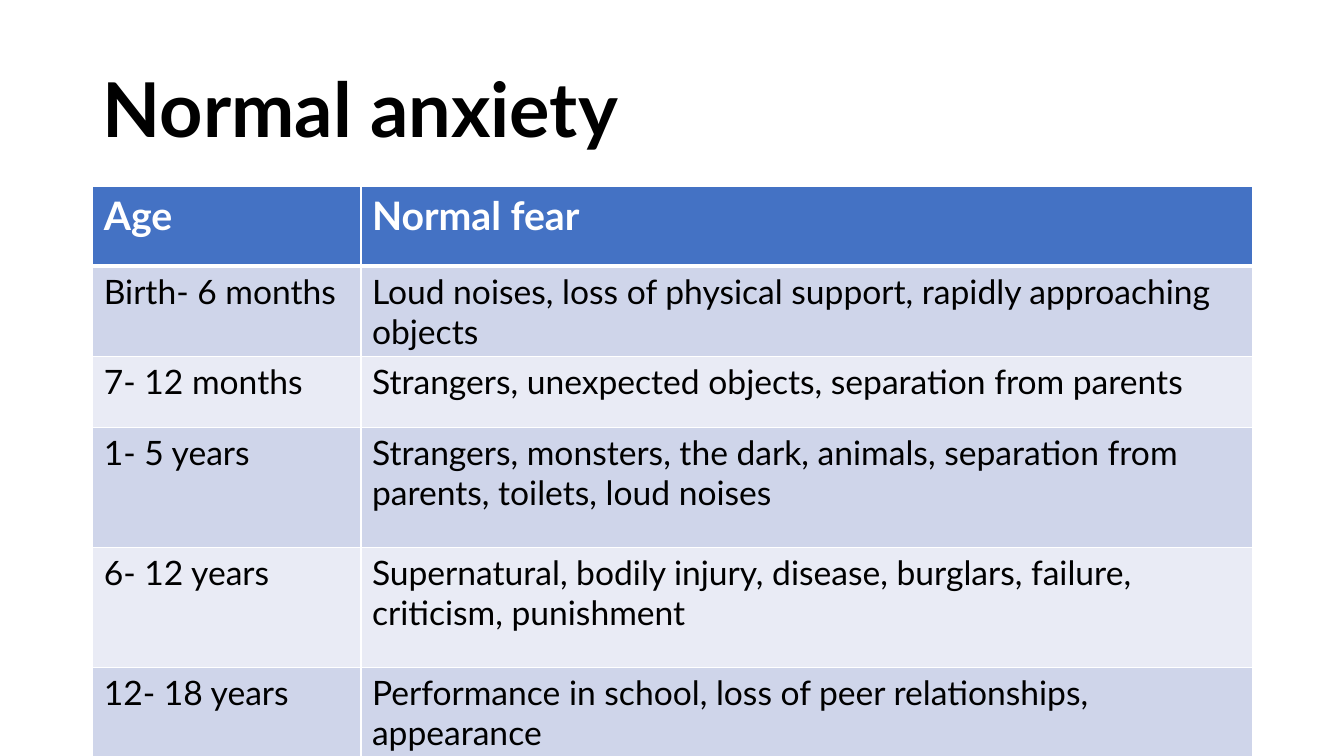
from lxml.etree import SubElement
from pptx import Presentation
from pptx.dml.color import RGBColor
from pptx.enum.text import MSO_ANCHOR, MSO_AUTO_SIZE, PP_ALIGN
from pptx.oxml.ns import qn
from pptx.util import Inches, Pt

BLACK = RGBColor(0x00, 0x00, 0x00)
WHITE = RGBColor(0xFF, 0xFF, 0xFF)
HEADER_BLUE = RGBColor(0x44, 0x72, 0xC4)
BAND_DARK = RGBColor(0xCF, 0xD5, 0xEA)
BAND_LIGHT = RGBColor(0xE9, 0xEB, 0xF5)

LEFT, WIDTH = 0.92, 11.5
COLUMN_WIDTHS = [2.66, 8.84]
ROW_HEIGHTS = [0.79, 0.7, 0.7, 1.19, 1.19, 0.7]
FEARS_BY_AGE = [
    ("Age", "Normal fear"),
    ("Birth- 6 months", "Loud noises, loss of physical support, rapidly approaching objects"),
    ("7- 12 months", "Strangers, unexpected objects, separation from parents"),
    ("1- 5 years", "Strangers, monsters, the dark, animals, separation from parents, "
                   "toilets, loud noises"),
    ("6- 12 years", "Supernatural, bodily injury, disease, burglars, failure, "
                    "criticism, punishment"),
    ("12- 18 years", "Performance in school, loss of peer relationships, appearance"),
]


class SlideBuilder:
    """Holds the text style and the current slide."""

    font = "Lato"

    def __init__(self, slide):
        self.s = slide

    def add_run(self, p, text, size, color, bold=False):
        r = p.add_run()
        r.text = text
        r.font.name = self.font
        r.font.size = Pt(size)
        r.font.bold = bold
        r.font.color.rgb = color

    def title(self, text, top, height):
        sp = self.s.shapes.title
        sp.left, sp.top = Inches(LEFT), Inches(top)
        sp.width, sp.height = Inches(WIDTH), Inches(height)
        tf = sp.text_frame
        tf.word_wrap = True
        tf.auto_size = MSO_AUTO_SIZE.NONE
        tf.vertical_anchor = MSO_ANCHOR.MIDDLE
        p = tf.paragraphs[0]
        p.alignment = PP_ALIGN.LEFT
        p.line_spacing = 0.9
        self.add_run(p, text, 54, BLACK, bold=True)

    def borders(self, cell, top, bottom):
        tc_pr = cell.fill._xPr
        sides = [("a:lnL", 1), ("a:lnR", 1), ("a:lnT", top), ("a:lnB", bottom)]
        for i, (tag, points) in enumerate(sides):
            ln = SubElement(tc_pr, qn(tag), w=str(Pt(points)))
            solid = SubElement(ln, qn("a:solidFill"))
            SubElement(solid, qn("a:srgbClr"), val=str(WHITE))
            tc_pr.insert(i, ln)  # border lines precede the cell fill

    def table(self, rows, top):
        frame = self.s.shapes.add_table(
            len(rows), len(COLUMN_WIDTHS), Inches(LEFT), Inches(top),
            Inches(WIDTH), Inches(sum(ROW_HEIGHTS)))
        table = frame.table
        for column, width in zip(table.columns, COLUMN_WIDTHS):
            column.width = Inches(width)
        for i, (texts, height) in enumerate(zip(rows, ROW_HEIGHTS)):
            table.rows[i].height = Inches(height)
            header = i == 0
            band = HEADER_BLUE if header else BAND_DARK if i % 2 else BAND_LIGHT
            for j, text in enumerate(texts):
                cell = table.cell(i, j)
                cell.margin_left = cell.margin_right = Inches(0.11)
                cell.margin_top = cell.margin_bottom = Inches(0.05)
                cell.fill.solid()
                cell.fill.fore_color.rgb = band
                self.borders(cell, top=3 if i == 1 else 1, bottom=3 if header else 1)
                self.add_run(cell.text_frame.paragraphs[0], text,
                             28 if header else 24, WHITE if header else BLACK, header)


def main():
    prs = Presentation()
    prs.slide_width, prs.slide_height = Inches(13.33), Inches(7.5)
    # Title-only layout
    builder = SlideBuilder(prs.slides.add_slide(prs.slide_layouts[5]))

    # Heading
    builder.title("Normal anxiety", top=0.4, height=1.45)

    # Fears by age
    builder.table(FEARS_BY_AGE, top=1.85)

    prs.save("out.pptx")


if __name__ == "__main__":
    main()
